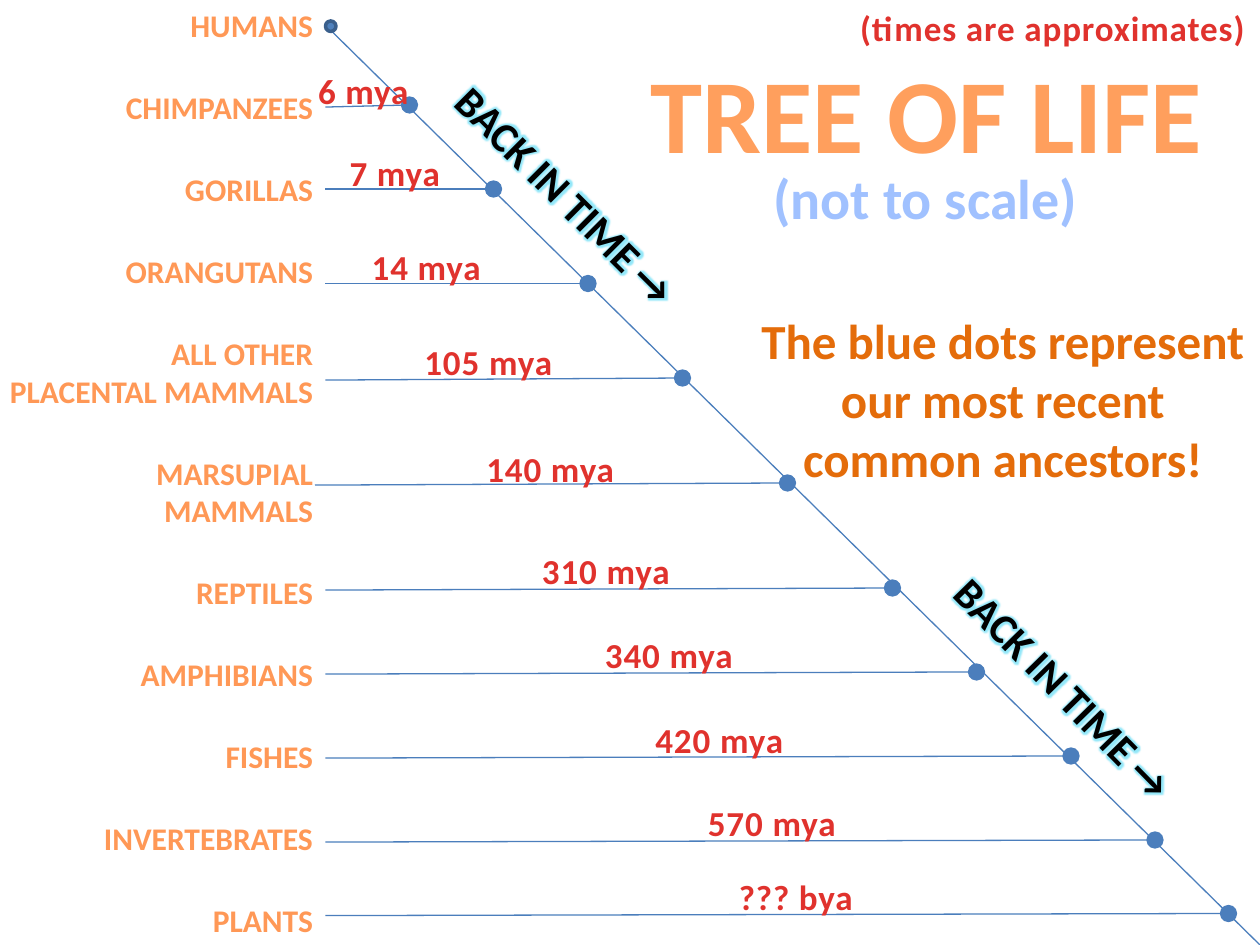
from dataclasses import dataclass

from lxml import etree
from pptx import Presentation
from pptx.dml.color import RGBColor
from pptx.enum.shapes import MSO_CONNECTOR, MSO_SHAPE
from pptx.enum.text import MSO_AUTO_SIZE, PP_ALIGN
from pptx.oxml.ns import qn
from pptx.util import Inches, Pt

STRAIGHT = MSO_CONNECTOR.STRAIGHT
OVAL = MSO_SHAPE.OVAL
FIT_SHAPE = MSO_AUTO_SIZE.SHAPE_TO_FIT_TEXT
CENTER, RIGHT = PP_ALIGN.CENTER, PP_ALIGN.RIGHT

LABEL_ORANGE = RGBColor(0xFF, 0x98, 0x56)
TITLE_ORANGE = RGBColor(0xFF, 0x9F, 0x5D)
NOTE_ORANGE = RGBColor(0xE4, 0x6C, 0x0A)
PALE_BLUE = RGBColor(0xA0, 0xC1, 0xFF)
TIME_RED = RGBColor(0xE0, 0x32, 0x2D)
BRANCH_BLUE = RGBColor(0x4B, 0x7E, 0xBC)
DOT_BLUE = RGBColor(0x4F, 0x81, 0xBD)
DOT_EDGE = RGBColor(0x3A, 0x5F, 0x8C)
BLACK = RGBColor(0, 0, 0)
GLOW_CYAN = RGBColor(0x4B, 0xD8, 0xF5)

FONT = "Calibri"
CELL = 1 / 12            # the tree sits on a grid of 120 columns by 90 rows
COLUMNS, ROWS = 120, 90
LABEL_RIGHT = 31         # column where labels end and branches start
LABEL_STEP = 7.8         # rows from one label to the next
EXTRA_LINE = 3.6         # more rows after a label of two lines


@dataclass
class Branch:
    label: str
    label_width: float
    dot: tuple           # column, row of the common ancestor
    time: str
    time_box: tuple      # column, row, width in columns
    drop: float = 0.2    # rows by which the left end lies lower
    start: float = LABEL_RIGHT


BRANCHES = [
    Branch("CHIMPANZEES", 20.4, (39, 10), "6 mya", (29, 6, 11.2)),
    Branch("GORILLAS", 14.8, (47, 18), "7 mya", (32, 13.8, 11.2), drop=0),
    Branch("ORANGUTANS", 20.4, (56, 27), "14 mya", (34.1, 22.8, 13), drop=0),
    Branch("ALL OTHER\nPLACENTAL MAMMALS", 31.6, (65, 36), "105 mya", (39.1, 31.8, 14.8)),
    Branch("MARSUPIAL\nMAMMALS", 17.5, (75, 46), "140 mya", (45, 42, 14.8), start=30),
    Branch("REPTILES", 13.7, (85, 56), "310 mya", (50.3, 51.7, 14.8)),
    Branch("AMPHIBIANS", 19, (93, 64), "340 mya", (56.3, 59.7, 14.8)),
    Branch("FISHES", 10.8, (102, 72), "420 mya", (61.1, 67.8, 14.8)),
    Branch("INVERTEBRATES", 22.4, (110, 80), "570 mya", (66.1, 75.7, 14.8)),
    Branch("PLANTS", 12.1, (117, 87), "??? bya", (69.1, 82.8, 13.4)),
]


def grid(cells):
    return Inches(cells * CELL)


def add_glow(run, color):
    """Put a soft halo behind the letters."""
    properties = run.font._element
    effects = etree.Element(qn("a:effectLst"))
    glow = etree.SubElement(effects, qn("a:glow"), rad=str(Pt(5)))
    tint = etree.SubElement(glow, qn("a:srgbClr"), val=str(color))
    etree.SubElement(tint, qn("a:alpha"), val="60000")
    properties.find(qn("a:solidFill")).addnext(effects)


def add_text(slide, text, box, *, size, color, align=CENTER, rotation=0,
             spacing=0, glow=None):
    shape = slide.shapes.add_textbox(*map(grid, box))
    shape.rotation = rotation
    frame = shape.text_frame
    frame.word_wrap = False
    frame.auto_size = FIT_SHAPE
    frame.text = text
    for paragraph in frame.paragraphs:
        paragraph.alignment = align
        run = paragraph.runs[0]
        run.font.name = FONT
        run.font.size = Pt(size)
        run.font.bold = True
        run.font.color.rgb = color
        if spacing:
            run.font._element.set("spc", str(int(spacing * 100)))
        if glow is not None:
            add_glow(run, glow)


def add_line(slide, start, end, dotted=False):
    line = slide.shapes.add_connector(STRAIGHT, *map(grid, start + end))
    line.line.color.rgb = BRANCH_BLUE
    line.line.width = Pt(0.75)
    if dotted:
        etree.SubElement(line.line._get_or_add_ln(), qn("a:tailEnd"),
                         type="oval", w="lg", len="lg")
    etree.SubElement(line._element.spPr, qn("a:effectLst"))


def add_dot(slide, column, row, diameter):
    dot = slide.shapes.add_shape(OVAL, *map(grid, (column, row, diameter, diameter)))
    dot.shadow.inherit = False
    dot.fill.solid()
    dot.fill.fore_color.rgb = DOT_BLUE
    dot.line.color.rgb = DOT_EDGE
    dot.line.width = Pt(2)


def add_label(slide, text, row, width):
    height = 4.8 + 3.7 * text.count("\n")
    add_text(slide, text, (LABEL_RIGHT - width, row, width, height),
             size=18, color=LABEL_ORANGE, align=RIGHT)


def add_time(slide, text, column, row, width):
    add_text(slide, text, (column, row, width, 5.3),
             size=20, color=TIME_RED, spacing=0.5)


def add_tree(slide):
    # Trunk with humans at its top
    add_line(slide, (LABEL_RIGHT, 2.4), (COLUMNS, ROWS))
    add_dot(slide, LABEL_RIGHT, 2, 1)
    add_label(slide, "HUMANS", 0, 14.2)

    # One branch for each group of living things
    row = LABEL_STEP
    for branch in BRANCHES:
        add_label(slide, branch.label, row, branch.label_width)
        row += LABEL_STEP + EXTRA_LINE * branch.label.count("\n")
        start = (branch.start, branch.dot[1] + branch.drop)
        add_line(slide, start, branch.dot, dotted=True)
        add_time(slide, branch.time, *branch.time_box)


def main():
    presentation = Presentation()
    presentation.slide_width = grid(COLUMNS)
    presentation.slide_height = grid(ROWS)
    slide = presentation.slides.add_slide(presentation.slide_layouts[6])

    add_tree(slide)

    # Title and notes
    add_text(slide, "TREE OF LIFE", (60.5, 4, 55.5, 13.3), size=60, color=TITLE_ORANGE)
    add_text(slide, "(not to scale)", (72.3, 15, 31.7, 7.7), size=32, color=PALE_BLUE)
    add_text(slide, "The blue dots represent\nour most recent\ncommon ancestors!",
             (71, 29, 49, 18.1), size=28, color=NOTE_ORANGE)
    add_time(slide, "(times are approximates)", 80.5, 0, 39.5)

    # Direction of time along the trunk
    for column, row, angle in ((38.9, 15.6, 44.9), (86.3, 62.5, 45.6)):
        add_text(slide, "BACK IN TIME →", (column, row, 30.1, 6), size=24,
                 color=BLACK, rotation=angle, glow=GLOW_CYAN)

    presentation.save("out.pptx")


if __name__ == "__main__":
    main()
